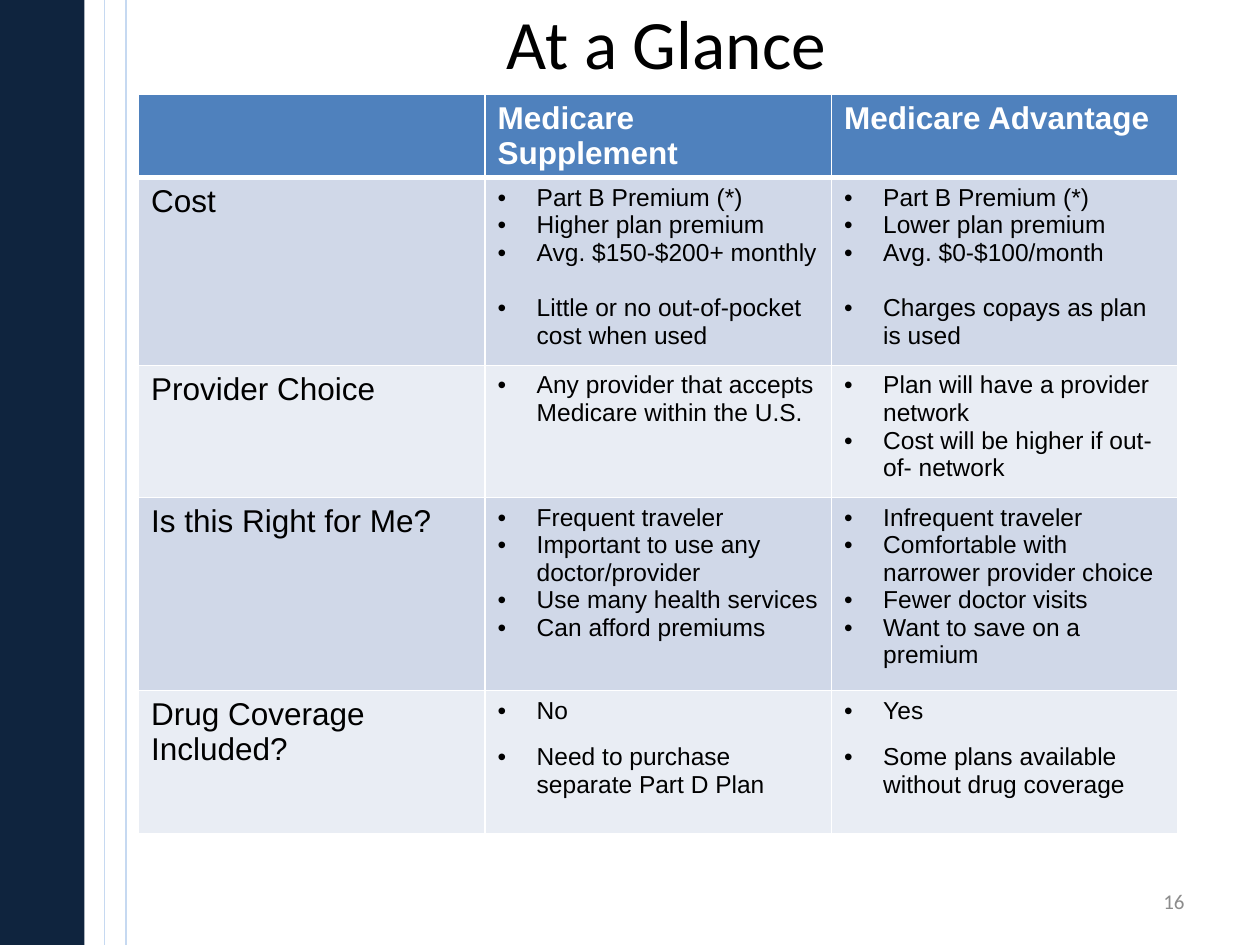
from lxml import etree
from pptx import Presentation
from pptx.dml.color import RGBColor
from pptx.enum.shapes import MSO_CONNECTOR, MSO_SHAPE
from pptx.enum.text import MSO_ANCHOR, MSO_AUTO_SIZE, PP_ALIGN
from pptx.oxml.ns import qn
from pptx.util import Inches, Pt

RECTANGLE = MSO_SHAPE.RECTANGLE
STRAIGHT = MSO_CONNECTOR.STRAIGHT
MIDDLE = MSO_ANCHOR.MIDDLE
NO_AUTOFIT = MSO_AUTO_SIZE.NONE
CENTER, RIGHT = PP_ALIGN.CENTER, PP_ALIGN.RIGHT
TITLE_ONLY = 5

HEADINGS = ["", "Medicare Supplement", "Medicare Advantage"]
# Topic, row height, space in points above the last item, items per plan
TOPICS = [
    ("Cost", 1.49, 16,
     ["Part B Premium (*)", "Higher plan premium", "Avg. $150-$200+ monthly",
      "Little or no out-of-pocket cost when used"],
     ["Part B Premium (*)", "Lower plan premium", "Avg. $0-$100/month",
      "Charges copays as plan is used"]),
    ("Provider Choice", 1.05, 0,
     ["Any provider that accepts Medicare within the U.S."],
     ["Plan will have a provider network",
      "Cost will be higher if out-of- network"]),
    ("Is this Right for Me?", 1.53, 0,
     ["Frequent traveler", "Important to use any doctor/provider",
      "Use many health services", "Can afford premiums"],
     ["Infrequent traveler", "Comfortable with narrower provider choice",
      "Fewer doctor visits", "Want to save on a premium"]),
    ("Drug Coverage Included?", 1.14, 11,
     ["No", "Need to purchase separate Part D Plan"],
     ["Yes", "Some plans available without drug coverage"]),
]


def color(value):
    return RGBColor.from_string(value)


class GlanceSlide:
    navy, pale_blue, white, black, gray = "0F243E", "C6D9F1", "FFFFFF", "000000", "8C8C8C"
    header_fill, band_fills = "4F81BD", ("D0D8E8", "E9EDF4")
    title_font, table_font = "Calibri", "Arial"
    column_width, header_height = 2.75, 0.66
    heading_size, item_size, indent = 18, 14, 0.31

    def __init__(self, slide):
        self.slide = slide

    def style(self, paragraph, font_name, size, ink, bold=False):
        font = paragraph.font
        font.name, font.size, font.bold = font_name, Pt(size), bold
        font.color.rgb = color(ink)

    def side_band(self, width, height):
        band = self.slide.shapes.add_shape(
            RECTANGLE, 0, 0, Inches(width), Inches(height))
        band.shadow.inherit = False
        band.fill.solid()
        band.fill.fore_color.rgb = color(self.navy)
        band.line.fill.background()

    def rule(self, x, height):
        rule = self.slide.shapes.add_connector(
            STRAIGHT, Inches(x), 0, Inches(x), Inches(height))
        rule.line.color.rgb = color(self.pale_blue)
        rule.line.width = Pt(0.75)
        etree.SubElement(rule._element.spPr, qn("a:effectLst"))

    def title(self, text, left, top, width, height):
        title = self.slide.shapes.title
        title.left, title.top = Inches(left), Inches(top)
        title.width, title.height = Inches(width), Inches(height)
        frame = title.text_frame
        frame.text = text
        frame.auto_size = NO_AUTOFIT
        frame.vertical_anchor = MIDDLE
        frame.paragraphs[0].alignment = CENTER
        self.style(frame.paragraphs[0], self.title_font, 39.6, self.black)

    def page_number(self, text, left, top, width, height):
        box = self.slide.shapes.add_textbox(
            Inches(left), Inches(top), Inches(width), Inches(height))
        frame = box.text_frame
        frame.word_wrap = True
        frame.vertical_anchor = MIDDLE
        frame.text = text
        frame.paragraphs[0].alignment = RIGHT
        self.style(frame.paragraphs[0], self.title_font, 12, self.gray)

    def paint_cell(self, cell, fill, bottom_width=1):
        cell.fill.solid()
        cell.fill.fore_color.rgb = color(fill)
        # Borders come before the fill in the cell properties
        properties = cell._tc.get_or_add_tcPr()
        widths = {"lnL": 1, "lnR": 1, "lnT": 1, "lnB": bottom_width}
        for position, (side, width) in enumerate(widths.items()):
            border = etree.Element(qn(f"a:{side}"), w=str(Pt(width)))
            solid = etree.SubElement(border, qn("a:solidFill"))
            etree.SubElement(solid, qn("a:srgbClr"), val=self.white)
            properties.insert(position, border)

    def heading(self, cell, text, ink, bold=False):
        cell.text = text
        self.style(cell.text_frame.paragraphs[0], self.table_font,
                   self.heading_size, ink, bold)

    def bullets(self, cell, items, last_gap):
        frame = cell.text_frame
        frame.text = "\n".join(items)
        for paragraph in frame.paragraphs:
            properties = paragraph._p.get_or_add_pPr()
            properties.set("marL", str(Inches(self.indent)))
            properties.set("indent", str(-Inches(self.indent)))
            etree.SubElement(properties, qn("a:buFont"), typeface=self.table_font)
            etree.SubElement(properties, qn("a:buChar"), char="•")
            self.style(paragraph, self.table_font, self.item_size, self.black)
        if last_gap:
            frame.paragraphs[-1].space_before = Pt(last_gap)

    def comparison(self, headings, topics, left, top):
        heights = [self.header_height] + [topic[1] for topic in topics]
        table = self.slide.shapes.add_table(
            len(heights), len(headings), Inches(left), Inches(top),
            Inches(self.column_width * len(headings)), Inches(sum(heights))).table
        for column in table.columns:
            column.width = Inches(self.column_width)
        for row, height in zip(table.rows, heights):
            row.height = Inches(height)

        for cell, text in zip(table.rows[0].cells, headings):
            self.paint_cell(cell, self.header_fill, bottom_width=3)
            self.heading(cell, text, self.white, bold=True)

        for index, (topic, _, last_gap, *plans) in enumerate(topics):
            cells = list(table.rows[index + 1].cells)
            for cell in cells:
                self.paint_cell(cell, self.band_fills[index % 2])
            self.heading(cells[0], topic, self.black)
            for cell, items in zip(cells[1:], plans):
                self.bullets(cell, items, last_gap)


def main():
    deck = Presentation()
    deck.slide_width, deck.slide_height = Inches(10), Inches(7.5)
    glance = GlanceSlide(deck.slides.add_slide(deck.slide_layouts[TITLE_ONLY]))

    # Decoration at the left edge
    glance.side_band(0.67, 7.5)
    for x in (1, 0.83):
        glance.rule(x, 7.5)

    # Content
    glance.title("At a Glance", 1.25, 0.17, 8.08, 0.33)
    glance.comparison(HEADINGS, TOPICS, 1.1, 0.75)
    glance.page_number("16", 7.17, 6.95, 2.33, 0.4)

    deck.save("out.pptx")


if __name__ == "__main__":
    main()
